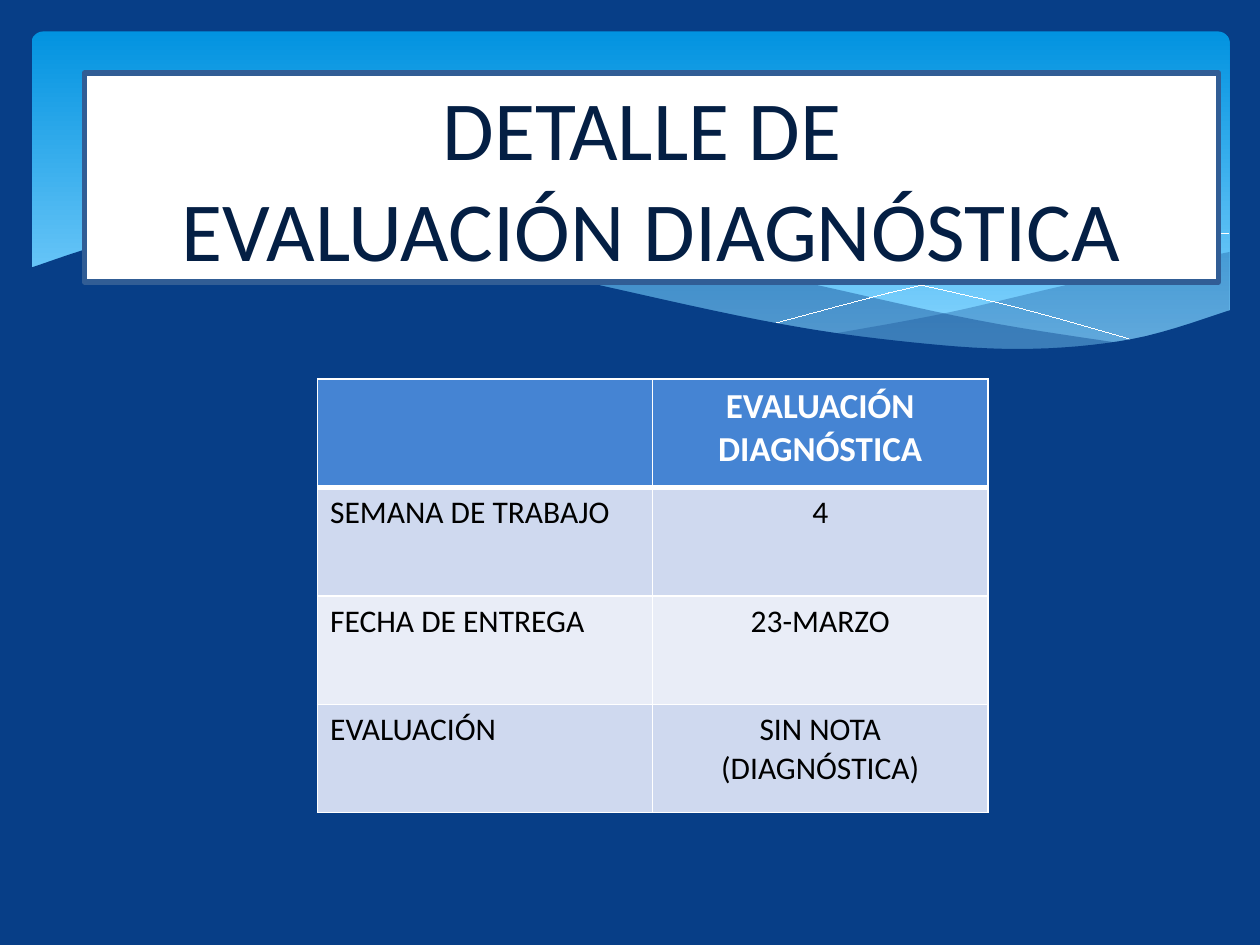
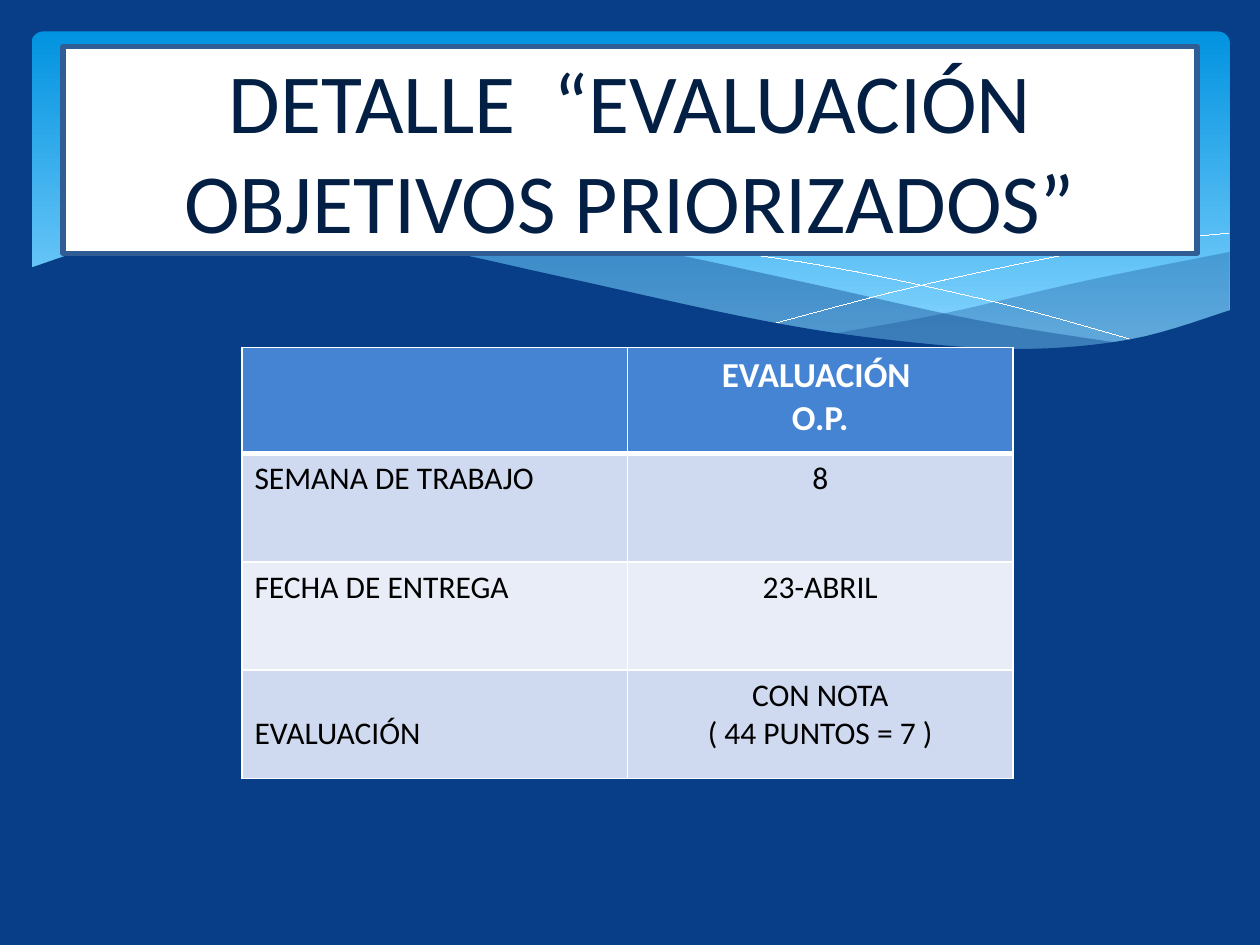
"""Builds two slides that detail the diagnostic and the prioritised objectives evaluations."""
from lxml import etree
from pptx import Presentation
from pptx.dml.color import RGBColor
from pptx.enum import shapes, text
from pptx.oxml.ns import qn
from pptx.util import Inches, Pt

ROW_LABELS = ("", "SEMANA DE TRABAJO", "FECHA DE ENTREGA", "EVALUACIÓN")
EVALUATIONS = [
    {
        "title": "DETALLE DE \nEVALUACIÓN DIAGNÓSTICA",
        "values": ("EVALUACIÓN DIAGNÓSTICA", "4", "23-MARZO", "SIN NOTA\n(DIAGNÓSTICA)"),
        "title_box": (0.67, 0.58, 9, 1.66),
        "table_corner": (2.52, 3.01),
        "column_width": 2.66,
        "header_height": 0.86,
        "last_label_drop": 0,
    },
    {
        "title": "DETALLE  “EVALUACIÓN OBJETIVOS PRIORIZADOS”",
        "values": ("EVALUACIÓN \nO.P.", "8", "23-ABRIL", "CON NOTA\n( 44 PUNTOS = 7 )"),
        "title_box": (0.5, 0.37, 9, 1.64),
        "table_corner": (1.92, 2.76),
        "column_width": 3.06,
        "header_height": 0.84,
        "last_label_drop": 0.3,
    },
]

NAVY = RGBColor(0x07, 0x3E, 0x87)
SKY_TOP = RGBColor(0x02, 0x93, 0xE0)
SKY_BOTTOM = RGBColor(0x83, 0xD3, 0xFE)
WHITE = RGBColor(0xFF, 0xFF, 0xFF)
BLACK = RGBColor(0, 0, 0)
TITLE_TEXT = RGBColor(0x04, 0x1F, 0x44)
TITLE_BORDER = RGBColor(0x31, 0x5D, 0x95)
HEADER_FILL = RGBColor(0x45, 0x84, 0xD3)
ROW_FILLS = (RGBColor(0xE9, 0xED, 0xF7), RGBColor(0xCF, 0xD9, 0xEF))

FONT = "Calibri"
TITLE_SIZE, HEADER_SIZE, BODY_SIZE = 48, 20, 18
SKY_BOX = (0.25, 0.25, 9.51, 2.7)
ROW_HEIGHT = 0.86
CELL_MARGIN = 0.05
THIN_BORDER, THICK_BORDER = 1, 3
HAIRLINE = Pt(0.01)
STEPS_PER_SPAN = 8

RIGHT_WAVE_TOP = [(9.76, 2), (8.61, 2.23), (7.53, 2.48), (6.61, 2.65)]
RIGHT_WAVE_BOTTOM = [(6.61, 2.65), (7.32, 2.74), (8.03, 2.78), (8.89, 2.72), (9.76, 2.47)]
LONG_WAVE_TOP = [(8.93, 2.73), (7.75, 2.54), (6.29, 2.22), (5.14, 1.98), (4.2, 1.87),
                 (3.44, 1.86), (2.86, 1.91)]
LONG_WAVE_BOTTOM = [(2.86, 1.91), (4.49, 2.22), (5.66, 2.48), (6.65, 2.66), (7.48, 2.76),
                    (8.28, 2.78), (8.93, 2.73)]
FRONT_WAVE_CREST = [(9.77, 2.46), (8.99, 2.69), (8.09, 2.77), (7.08, 2.7), (6.03, 2.54),
                    (4.47, 2.2), (3.4, 1.97), (2.5, 1.86), (1.77, 1.84), (0.95, 1.91), (0.23, 2.13)]
FRONT_WAVE_FLOOR = [(0.23, 3.29), (9.77, 3.29)]
FALLING_CURVE = [(3.09, 1.95), (3.87, 1.87), (4.69, 1.89), (5.56, 1.97), (6.65, 2.13),
                 (7.95, 2.41), (9.07, 2.72)]
RISING_CURVE = [(6.13, 2.57), (7.2, 2.29), (8.36, 2.04), (9.1, 1.92), (9.75, 1.85)]


def spline(before, start, end, after, t):
    """Return the Catmull-Rom value between start and end at t from 0 to 1."""
    slope_in, slope_out = (end - before) / 2, (after - start) / 2
    bend = 3 * (end - start) - 2 * slope_in - slope_out
    twist = 2 * (start - end) + slope_in + slope_out
    return start + slope_in * t + bend * t ** 2 + twist * t ** 3


def smooth(knots):
    """Return a dense smooth curve through a few knots."""
    padded = [knots[0], *knots, knots[-1]]
    curve = [
        tuple(spline(*axis, step / STEPS_PER_SPAN) for axis in zip(*padded[i:i + 4]))
        for i in range(len(knots) - 1)
        for step in range(STEPS_PER_SPAN)
    ]
    return curve + [knots[-1]]


def add_outline(slide, points, closed):
    """Add a freeform through points given in inches."""
    corners = [(Inches(x), Inches(y)) for x, y in points]
    builder = slide.shapes.build_freeform(*corners[0])
    builder.add_line_segments(corners[1:], close=closed)
    shape = builder.convert_to_shape()
    shape.shadow.inherit = False
    return shape


def add_wave(slide, outline, opacity):
    """Add a navy wave with an opacity in percent."""
    wave = add_outline(slide, outline, closed=True)
    wave.fill.solid()
    wave.fill.fore_color.rgb = NAVY
    color = wave.element.spPr.find(f"{qn('a:solidFill')}/{qn('a:srgbClr')}")
    etree.SubElement(color, qn("a:alpha"), val=str(opacity * 1000))
    wave.line.fill.background()


def add_curve(slide, knots):
    """Add a white hairline curve."""
    curve = add_outline(slide, smooth(knots), closed=False)
    curve.fill.background()
    curve.line.color.rgb = WHITE
    curve.line.width = HAIRLINE


def add_sky(slide):
    """Add the rounded band that fades downwards."""
    sky = slide.shapes.add_shape(shapes.MSO_SHAPE.ROUNDED_RECTANGLE, *map(Inches, SKY_BOX))
    sky.adjustments[0] = 0.034
    sky.shadow.inherit = False
    sky.line.fill.background()
    sky.fill.gradient()
    sky.fill.gradient_angle = 270
    for stop, color, position in zip(sky.fill.gradient_stops, (SKY_TOP, SKY_BOTTOM), (0, 0.9)):
        stop.color.rgb = color
        stop.position = position


def add_backdrop(slide):
    """Add the sky with its waves and curves, from back to front."""
    add_sky(slide)
    add_wave(slide, smooth(RIGHT_WAVE_TOP) + smooth(RIGHT_WAVE_BOTTOM), 29)
    add_wave(slide, smooth(LONG_WAVE_TOP) + smooth(LONG_WAVE_BOTTOM), 40)
    for knots in (FALLING_CURVE, RISING_CURVE):
        add_curve(slide, knots)
    add_wave(slide, smooth(FRONT_WAVE_CREST) + FRONT_WAVE_FLOOR, 100)


def style_paragraphs(frame, size, color, bold=False, alignment=text.PP_ALIGN.CENTER):
    """Give every paragraph of a text frame one style."""
    for paragraph in frame.paragraphs:
        paragraph.alignment = alignment
        paragraph.font.name = FONT
        paragraph.font.size = Pt(size)
        paragraph.font.bold = bold
        paragraph.font.color.rgb = color


def add_title(slide, title, box):
    """Add the framed title."""
    shape = slide.shapes.add_shape(shapes.MSO_SHAPE.RECTANGLE, *map(Inches, box))
    shape.shadow.inherit = False
    shape.fill.solid()
    shape.fill.fore_color.rgb = WHITE
    shape.line.color.rgb = TITLE_BORDER
    shape.line.width = Pt(3)
    frame = shape.text_frame
    frame.word_wrap = True
    frame.vertical_anchor = text.MSO_ANCHOR.MIDDLE
    frame.text = title
    style_paragraphs(frame, TITLE_SIZE, TITLE_TEXT)


def set_borders(cell, row):
    """Draw white borders, thick only between the header and the first row."""
    top = THICK_BORDER if row == 1 else THIN_BORDER
    bottom = THICK_BORDER if row == 0 else THIN_BORDER
    widths = {"lnL": THIN_BORDER, "lnR": THIN_BORDER, "lnT": top, "lnB": bottom}
    properties = cell._tc.get_or_add_tcPr()
    for index, (tag, width) in enumerate(widths.items()):
        border = etree.Element(qn(f"a:{tag}"), w=str(Pt(width)))
        fill = etree.SubElement(border, qn("a:solidFill"))
        etree.SubElement(fill, qn("a:srgbClr"), val=str(WHITE))
        properties.insert(index, border)


def fill_cell(cell, row, content, alignment):
    """Write a cell in the style of its row."""
    cell.text = content
    cell.fill.solid()
    if row == 0:
        cell.fill.fore_color.rgb = HEADER_FILL
        style_paragraphs(cell.text_frame, HEADER_SIZE, WHITE, True, alignment)
    else:
        cell.fill.fore_color.rgb = ROW_FILLS[row % 2]
        style_paragraphs(cell.text_frame, BODY_SIZE, BLACK, False, alignment)
    set_borders(cell, row)


def add_detail_table(slide, evaluation):
    """Add the table of week, date and grading."""
    row_count = len(ROW_LABELS)
    heights = [evaluation["header_height"]] + [ROW_HEIGHT] * (row_count - 1)
    width = evaluation["column_width"]
    box = (*evaluation["table_corner"], 2 * width, sum(heights))
    table = slide.shapes.add_table(row_count, 2, *map(Inches, box)).table
    for column in table.columns:
        column.width = Inches(width)
    for row, (label, value) in enumerate(zip(ROW_LABELS, evaluation["values"])):
        table.rows[row].height = Inches(heights[row])
        fill_cell(table.cell(row, 0), row, label, text.PP_ALIGN.LEFT)
        fill_cell(table.cell(row, 1), row, value, text.PP_ALIGN.CENTER)
    last_label = table.cell(row_count - 1, 0)
    last_label.margin_top = Inches(CELL_MARGIN + evaluation["last_label_drop"])


def main():
    """Build and save the presentation."""
    presentation = Presentation()
    presentation.slide_width, presentation.slide_height = Inches(10), Inches(7.5)
    background = presentation.slide_master.background.fill
    background.solid()
    background.fore_color.rgb = NAVY
    blank_layout = presentation.slide_layouts[6]
    for evaluation in EVALUATIONS:
        slide = presentation.slides.add_slide(blank_layout)
        add_backdrop(slide)
        add_title(slide, evaluation["title"], evaluation["title_box"])
        add_detail_table(slide, evaluation)
    presentation.save("out.pptx")


if __name__ == "__main__":
    main()
